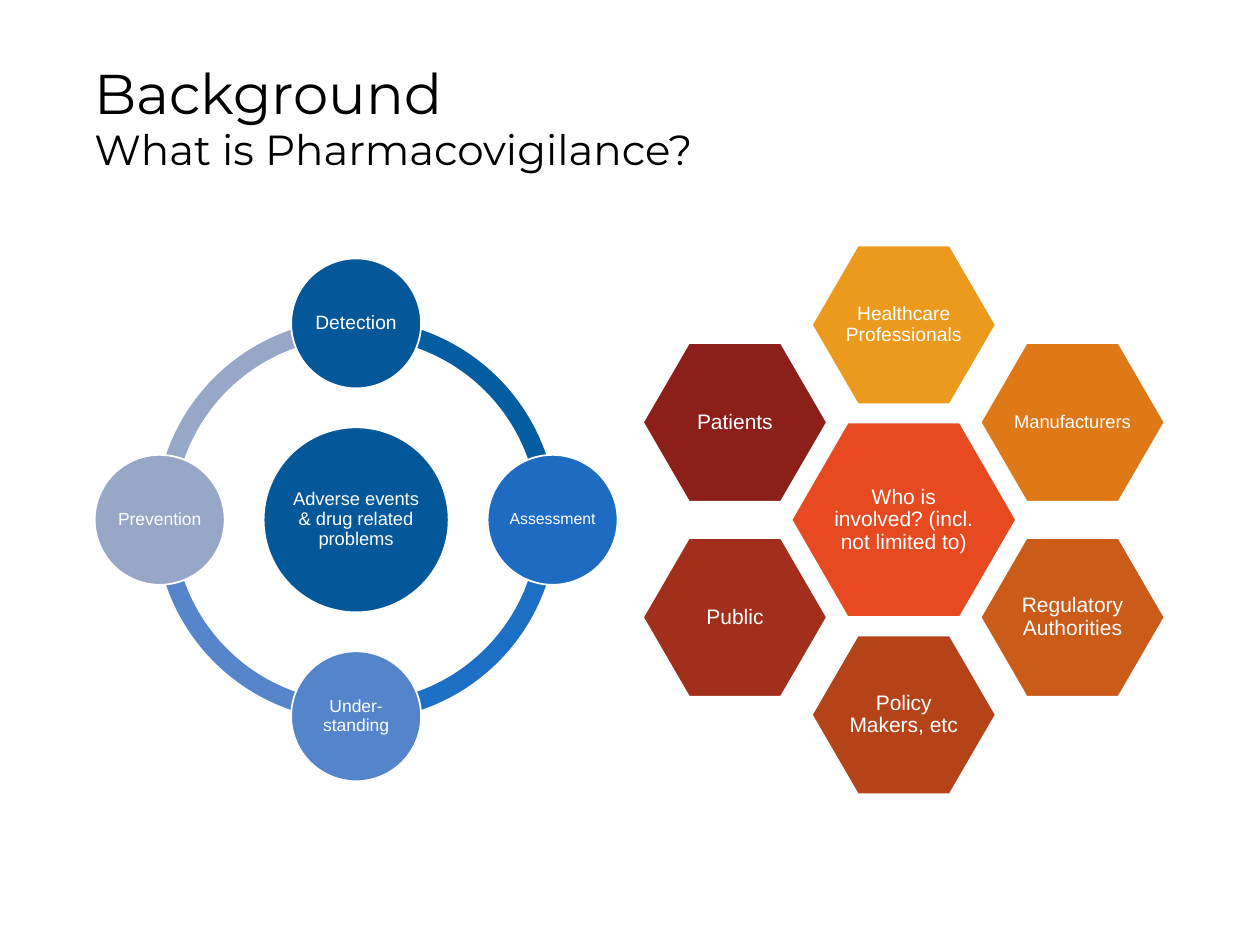
"""Build the pharmacovigilance background slide."""
from math import cos, radians, sin

from pptx import Presentation
from pptx.dml.color import RGBColor
from pptx.enum.shapes import MSO_SHAPE
from pptx.enum.text import MSO_ANCHOR, MSO_AUTO_SIZE, PP_ALIGN
from pptx.util import Cm, Pt

ELLIPSE = MSO_SHAPE.OVAL
BLOCK_ARC = MSO_SHAPE.BLOCK_ARC
TOP = MSO_ANCHOR.TOP
MIDDLE = MSO_ANCHOR.MIDDLE
NO_AUTOFIT = MSO_AUTO_SIZE.NONE
LEFT = PP_ALIGN.LEFT
CENTER = PP_ALIGN.CENTER

WHITE = "FFFFFF"
CYCLE_CENTER = (7.18, 10.48)
CYCLE_RADIUS = 3.96
HEXAGON_CENTER = (18.22, 10.48)
HEXAGON_RADIUS = 3.93
RIGHT_ANGLE = 54  # one quarter turn in adjustment units

CYCLE_STEPS = [
    ("Detection", 11, "045799", "045CA1"),
    ("Assessment", 9, "1D6CC1", "1D6FC5"),
    ("Under-standing", 10, "5484CA", "5685CB"),
    ("Prevention", 10, "96A7C8", "96A7C8"),
]
STAKEHOLDERS = [
    ("Healthcare Professionals", 11, "EC9A1E"),
    ("Manufacturers", 10.5, "DF7917"),
    ("Regulatory Authorities", 12, "CA5B19"),
    ("Policy Makers, etc", 12, "B5431A"),
    ("Public", 12, "A12F1B"),
    ("Patients", 12, "8D1F1B"),
]


def color(hex_string):
    """Return the colour for a hex string."""
    return RGBColor.from_string(hex_string)


def ring_position(center, radius, index, count):
    """Return the place of one item, clockwise from the top of a ring."""
    angle = radians(360 * index / count)
    return center[0] + radius * sin(angle), center[1] - radius * cos(angle)


def set_margins(frame, horizontal, vertical):
    """Set the inner margins of a text frame in centimetres."""
    frame.margin_left = frame.margin_right = Cm(horizontal)
    frame.margin_top = frame.margin_bottom = Cm(vertical)


def paint(shape, fill):
    """Give a shape a flat fill and a thin white outline."""
    shape.shadow.inherit = False
    shape.fill.solid()
    shape.fill.fore_color.rgb = color(fill)
    shape.line.color.rgb = color(WHITE)
    shape.line.width = Pt(1)


def write_label(shape, text, size, margins):
    """Write a centred white label inside a shape."""
    frame = shape.text_frame
    frame.word_wrap = True
    frame.vertical_anchor = MIDDLE
    set_margins(frame, *margins)
    paragraph = frame.paragraphs[0]
    paragraph.text = text
    paragraph.alignment = CENTER
    paragraph.line_spacing = 0.9
    paragraph.font.name = "Arial"
    paragraph.font.size = Pt(size)
    paragraph.font.color.rgb = color(WHITE)


def add_centered(shapes, kind, center, diameter):
    """Add a preset shape in a square around a centre."""
    left, top = (Cm(value - diameter / 2) for value in center)
    return shapes.add_shape(kind, left, top, Cm(diameter), Cm(diameter))


def add_circle(shapes, center, diameter, text, size, fill):
    """Add a labelled circle."""
    circle = add_centered(shapes, ELLIPSE, center, diameter)
    paint(circle, fill)
    write_label(circle, text, size, (0.03, 0.03))


def add_arc(shapes, index, fill):
    """Add the quarter of the cycle that follows one step."""
    arc = add_centered(shapes, BLOCK_ARC, CYCLE_CENTER, 8.1)
    arc.adjustments[0] = (index + 3) % 4 * RIGHT_ANGLE
    arc.adjustments[1] = index * RIGHT_ANGLE
    arc.adjustments[2] = 0.046
    paint(arc, fill)
    arc.line.fill.background()


def add_hexagon(shapes, center, width, height, text, size, fill, margins):
    """Add a labelled hexagon with points to the left and right."""
    outline = [(-0.5, 0), (-0.25, -0.5), (0.25, -0.5),
               (0.5, 0), (0.25, 0.5), (-0.25, 0.5)]
    points = [(Cm(center[0] + x * width), Cm(center[1] + y * height))
              for x, y in outline]
    builder = shapes.build_freeform(*points[0])
    builder.add_line_segments(points[1:], close=True)
    hexagon = builder.convert_to_shape()
    paint(hexagon, fill)
    write_label(hexagon, text, size, margins)


def add_title(slide, heading, subheading):
    """Fill the title placeholder with a heading and a smaller line."""
    title = slide.shapes.title
    title.left, title.top = Cm(1.9), Cm(1.27)
    title.width, title.height = Cm(21.6), Cm(2.67)
    frame = title.text_frame
    frame.auto_size = NO_AUTOFIT
    frame.word_wrap = True
    frame.vertical_anchor = TOP
    set_margins(frame, 0, 0)
    paragraph = frame.paragraphs[0]
    paragraph.alignment = LEFT
    paragraph.line_spacing = 0.95
    paragraph.font.name = "Montserrat"
    paragraph.font.size = Pt(32)
    paragraph.font.color.rgb = color("000000")
    paragraph.add_run().text = heading
    paragraph.add_line_break()
    second_line = paragraph.add_run()
    second_line.text = subheading
    second_line.font.size = Pt(24)


def add_cycle(slide):
    """Add the cycle of four steps around its hub."""
    shapes = slide.shapes.add_group_shape().shapes
    for index, step in reversed(list(enumerate(CYCLE_STEPS))):
        add_arc(shapes, index, step[3])
    add_circle(shapes, CYCLE_CENTER, 3.73,
               "Adverse events & drug related problems", 10.5, "045799")
    for index, (text, size, fill, _) in enumerate(CYCLE_STEPS):
        center = ring_position(CYCLE_CENTER, CYCLE_RADIUS, index, len(CYCLE_STEPS))
        add_circle(shapes, center, 2.62, text, size, fill)


def add_stakeholders(slide):
    """Add the ring of stakeholders around the central question."""
    shapes = slide.shapes.add_group_shape().shapes
    add_hexagon(shapes, HEXAGON_CENTER, 4.53, 3.92,
                "Who is involved? (incl. not limited to)", 12, "E74A21", (0.79, 0.69))
    for index, (text, size, fill) in enumerate(STAKEHOLDERS):
        center = ring_position(HEXAGON_CENTER, HEXAGON_RADIUS, index, len(STAKEHOLDERS))
        add_hexagon(shapes, center, 3.71, 3.2, text, size, fill, (0.65, 0.57))


def main():
    """Build and save the presentation."""
    presentation = Presentation()
    presentation.slide_width, presentation.slide_height = Cm(25.4), Cm(19.05)
    slide = presentation.slides.add_slide(presentation.slide_layouts[5])
    add_title(slide, "Background", "What is Pharmacovigilance?")
    add_cycle(slide)
    add_stakeholders(slide)
    presentation.save("out.pptx")


if __name__ == "__main__":
    main()
